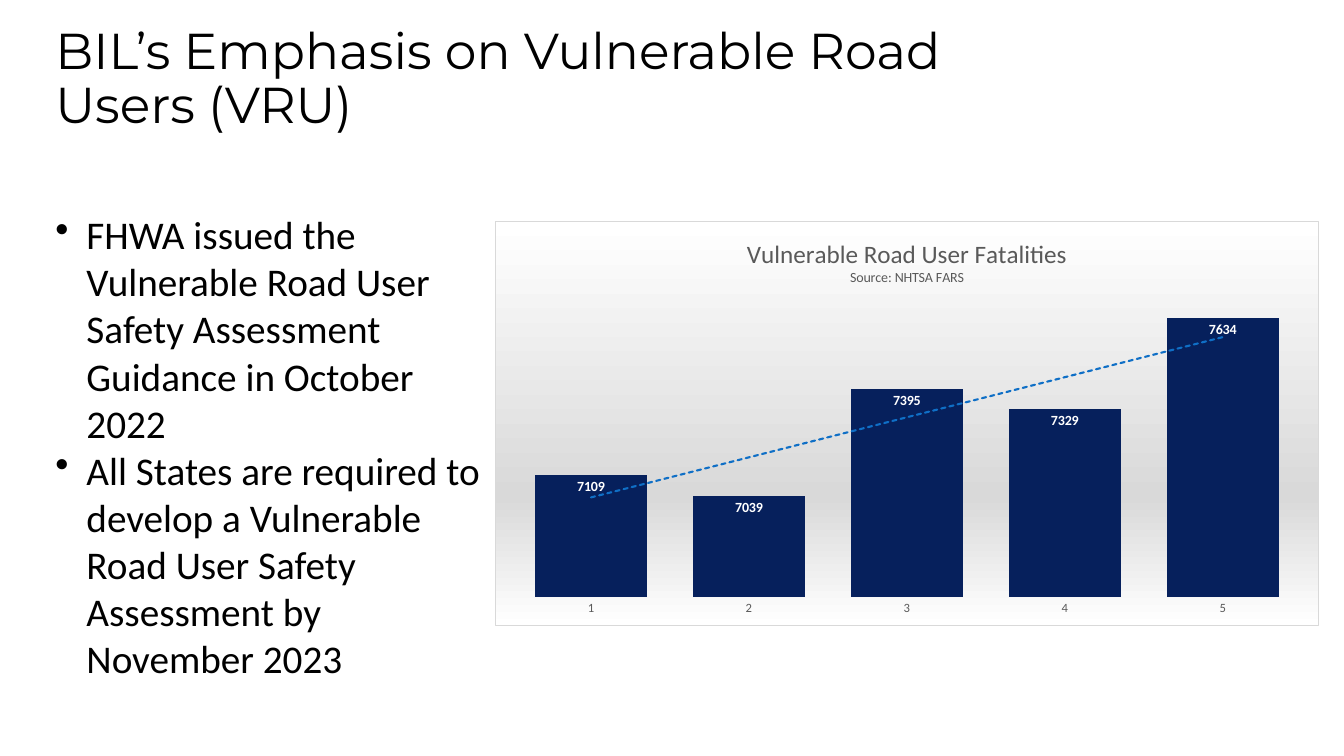
from lxml import etree
from pptx import Presentation
from pptx import util as u
from pptx.chart.data import CategoryChartData
from pptx.dml.color import RGBColor
from pptx.enum import chart as ch, text
from pptx.oxml import parse_xml
from pptx.oxml.ns import nsdecls, qn


def rgb(code):
    return RGBColor.from_string(code)


def style(obj, vals):
    for key, val in vals.items():
        setattr(obj, key, val)


def font(obj, size, color, name="Calibri", bold=False):
    style(obj, {"size": u.Pt(size), "name": name, "bold": bold})
    obj.color.rgb = rgb(color)


class Deck:
    ink, gray, navy, blue = "000000", "595959", "06205C", "0F6FC6"

    def __init__(self):
        self.prs = Presentation()
        style(self.prs, {"slide_width": u.Inches(13.33),
                         "slide_height": u.Inches(7.5)})
        self.slide = self.prs.slides.add_slide(self.prs.slide_layouts[6])

    def text(self, box, lines, size, name="Calibri", bullet=False, form=None,
             space=None):
        frame = self.slide.shapes.add_textbox(*map(u.Inches, box)).text_frame
        style(frame, {"word_wrap": True, **(form or {})})
        for i, line in enumerate(lines):
            para = frame.paragraphs[0] if i == 0 else frame.add_paragraph()
            para.text = line
            if space:
                para.line_spacing = space
            if bullet:
                props = para._p.get_or_add_pPr()
                props.set("marL", str(u.Inches(0.31)))
                props.set("indent", str(-u.Inches(0.31)))
                mark = etree.SubElement(props, qn("a:buChar"))
                mark.set("char", "•")
            font(para.runs[0].font, size, self.ink, name)

    def chart(self, box, cats, vals, title):
        data = CategoryChartData()
        data.categories = cats
        data.add_series("Series 1", vals)
        chart = self.slide.shapes.add_chart(
            ch.XL_CHART_TYPE.COLUMN_CLUSTERED, *map(u.Inches, box),
            data).chart
        font(chart.font, 10, self.ink)
        style(chart, {"has_legend": False, "has_title": True})

        # Title lines
        frame = chart.chart_title.text_frame
        for i, (line, size) in enumerate(title):
            para = frame.paragraphs[0] if i == 0 else frame.add_paragraph()
            para.text = line
            font(para.runs[0].font, size, self.gray)

        # Axes
        style(chart.value_axis, {
            "minimum_scale": 6700, "maximum_scale": 7700,
            "has_major_gridlines": False, "visible": False})
        axis = chart.category_axis
        axis.major_tick_mark = ch.XL_TICK_MARK.NONE
        axis.format.line.fill.background()
        font(axis.tick_labels.font, 9, self.gray)

        # Columns and labels
        plot = chart.plots[0]
        style(plot, {"gap_width": 41, "vary_by_categories": False})
        bars = plot.series[0]
        bars.format.fill.solid()
        bars.format.fill.fore_color.rgb = rgb(self.navy)
        labels = bars.data_labels
        style(labels, {"show_value": True,
                       "position": ch.XL_LABEL_POSITION.INSIDE_END})
        font(labels.font, 10, "FFFFFF", bold=True)
        self.trend(bars)
        self.area(chart)

    def trend(self, bars):
        line = parse_xml(
            f'<c:trendline {nsdecls("c", "a")}><c:spPr>'
            f'<a:ln w="{u.Pt(1.5)}" cap="rnd"><a:solidFill>'
            f'<a:srgbClr val="{self.blue}"/></a:solidFill>'
            '<a:prstDash val="sysDash"/></a:ln></c:spPr>'
            '<c:trendlineType val="linear"/><c:dispRSqr val="0"/>'
            '<c:dispEq val="0"/></c:trendline>')
        bars._element.find(qn("c:cat")).addprevious(line)

    def area(self, chart):
        stops = "".join(
            f'<a:gs pos="{pos * 1000}"><a:srgbClr val="{color}"/></a:gs>'
            for pos, color in [(0, "FFFFFF"), (68, "D9D9D9"),
                               (100, "FFFFFF")])
        look = parse_xml(
            f'<c:spPr {nsdecls("c", "a")}><a:gradFill><a:gsLst>{stops}'
            '</a:gsLst><a:lin ang="5400000" scaled="0"/></a:gradFill>'
            f'<a:ln w="{u.Pt(0.75)}"><a:solidFill><a:srgbClr val="D9D9D9"/>'
            '</a:solidFill></a:ln></c:spPr>')
        root = chart.element.find(qn("c:chart"))
        root.addnext(look)

        # Plot position as shares of the chart
        plot = root.find(qn("c:plotArea"))
        for old in plot.findall(qn("c:layout")):
            plot.remove(old)
        spots = "".join(
            f'<c:{key} val="{val}"/>' for key, val in
            {"layoutTarget": "inner", "xMode": "edge", "yMode": "edge",
             "x": 0.02, "y": 0.19, "w": 0.96, "h": 0.74}.items())
        plot.insert(0, parse_xml(
            f'<c:layout {nsdecls("c")}><c:manualLayout>{spots}'
            '</c:manualLayout></c:layout>'))


def main():
    deck = Deck()

    # Heading
    deck.text((0.45, 0.07, 8.99, 1.45),
              ["BIL’s Emphasis on Vulnerable Road Users (VRU)"], 36,
              "Montserrat", space=0.9,
              form={"vertical_anchor": text.MSO_ANCHOR.MIDDLE})

    # Fatalities chart
    deck.chart((4.91, 2.19, 8.17, 4.02), ["1", "2", "3", "4", "5"],
               [7109, 7039, 7395, 7329, 7634],
               [("Vulnerable Road User Fatalities", 18),
                ("Source: NHTSA FARS", 10)])

    # Requirements
    deck.text((0.45, 2.04, 4.47, 4.81),
              ["FHWA issued the Vulnerable Road User Safety Assessment "
               "Guidance in October 2022",
               "All States are required to develop a Vulnerable Road User "
               "Safety Assessment by November 2023"], 28, bullet=True,
              form={"auto_size": text.MSO_AUTO_SIZE.SHAPE_TO_FIT_TEXT})

    deck.prs.save("out.pptx")


if __name__ == "__main__":
    main()
